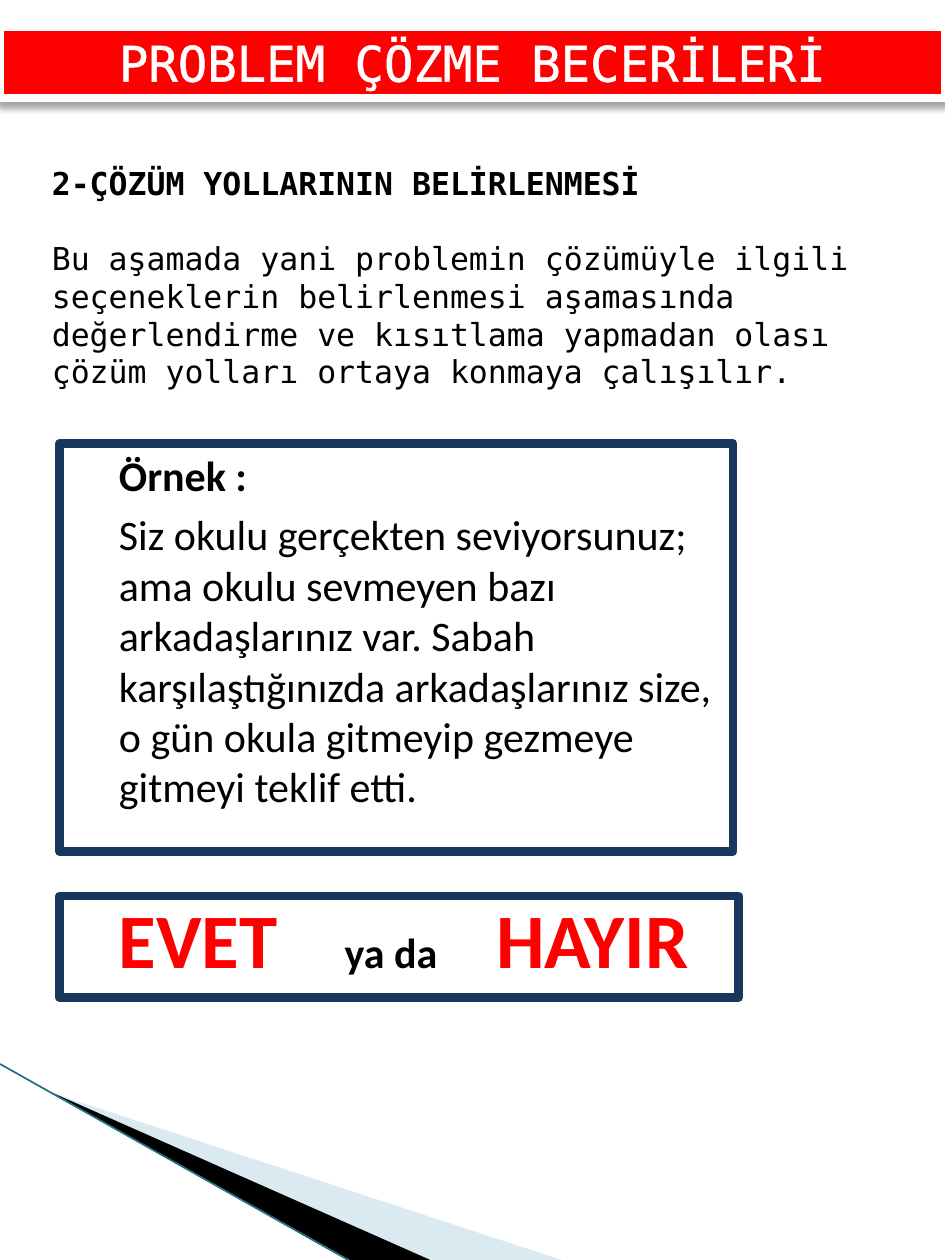
from dataclasses import dataclass

from lxml import etree
from pptx import Presentation
from pptx.dml.color import RGBColor
from pptx.enum.shapes import MSO_CONNECTOR, MSO_SHAPE
from pptx.enum.text import MSO_ANCHOR, PP_ALIGN
from pptx.oxml import parse_xml
from pptx.oxml.ns import nsdecls, qn
from pptx.util import Pt

RECTANGLE = MSO_SHAPE.RECTANGLE
STRAIGHT = MSO_CONNECTOR.STRAIGHT
LEFT, CENTER = PP_ALIGN.LEFT, PP_ALIGN.CENTER
TOP, MIDDLE = MSO_ANCHOR.TOP, MSO_ANCHOR.MIDDLE


@dataclass(frozen=True)
class Theme:
    red: str = "FF0000"
    white: str = "FFFFFF"
    black: str = "000000"
    navy: str = "17375E"
    pale_blue: str = "A0CBDC"
    teal: str = "1F7080"
    mono: str = "DejaVu Sans Mono"
    sans: str = "Calibri"
    title: int = 28
    body: int = 18
    example: int = 24
    answer: int = 44
    border: int = 5


THEME = Theme()


def color(value):
    return RGBColor.from_string(value)


def set_values(target, values):
    for name, value in values.items():
        setattr(target, name, value)


def set_fill(shape, value, alpha=None):
    if value is None:
        shape.fill.background()
        return
    shape.fill.solid()
    shape.fill.fore_color.rgb = color(value)
    if alpha is not None:
        color_element = shape._element.spPr.find(qn("a:solidFill"))[0]
        etree.SubElement(color_element, qn("a:alpha"), val=str(alpha * 1000))


def add_box(slide, bounds, fill, border):
    shape = slide.shapes.add_shape(RECTANGLE, *map(Pt, bounds))
    shape.shadow.inherit = False
    set_fill(shape, fill)
    shape.line.color.rgb = color(border)
    shape.line.width = Pt(THEME.border)
    line = shape.line._ln
    etree.SubElement(line, qn("a:round"))
    return shape


def set_frame(shape, anchor=TOP, margin_left=7.2):
    frame = shape.text_frame
    set_values(frame, {"word_wrap": True, "vertical_anchor": anchor,
                       "margin_left": Pt(margin_left)})
    return frame


def add_run(paragraph, text, face, size, text_color, bold=False):
    run = paragraph.add_run()
    run.text = text
    set_values(run.font, {"name": face, "size": Pt(size), "bold": bold})
    run.font.color.rgb = color(text_color)
    return run


def add_paragraphs(frame, texts, face, size, gap):
    """Write a bold heading followed by plain paragraphs."""
    for index, text in enumerate(texts):
        paragraph = frame.add_paragraph() if index else frame.paragraphs[0]
        paragraph.alignment = LEFT
        paragraph.space_before = Pt(gap if index else 0)
        add_run(paragraph, text, face, size, THEME.black, bold=index == 0)


def add_tabs(paragraph, positions):
    tabs = etree.SubElement(paragraph._p.get_or_add_pPr(), qn("a:tabLst"))
    for position in positions:
        etree.SubElement(tabs, qn("a:tab"), pos=str(Pt(position)), algn="l")


def add_wedge(slide, points, fill, alpha=None):
    corners = [(Pt(x), Pt(y)) for x, y in points]
    builder = slide.shapes.build_freeform(*corners[0])
    builder.add_line_segments(corners[1:], close=True)
    shape = builder.convert_to_shape()
    shape.shadow.inherit = False
    set_fill(shape, fill, alpha)
    shape.line.fill.background()


def add_corner(slide):
    add_wedge(slide, [(29.5, 624.5), (321, 720), (246, 720)], THEME.pale_blue, 40)
    add_wedge(slide, [(29, 624), (246, 720), (200, 720)], THEME.black)
    edge = slide.shapes.add_connector(STRAIGHT, *map(Pt, (0, 608, 199, 720)))
    edge.line.color.rgb = color(THEME.teal)
    edge.line.width = Pt(0.95)
    etree.SubElement(edge._element.spPr, qn("a:effectLst"))


def add_banner(slide, text):
    banner = add_box(slide, (0, 15, 540, 41), THEME.red, THEME.white)
    effects = banner._element.spPr.find(qn("a:effectLst"))
    effects.append(parse_xml(
        f'<a:outerShdw {nsdecls("a")} blurRad="{Pt(4)}" dist="{Pt(3)}" dir="5400000">'
        f'<a:srgbClr val="{THEME.black}"><a:alpha val="35000"/></a:srgbClr>'
        '</a:outerShdw>'))
    paragraph = set_frame(banner, MIDDLE).paragraphs[0]
    paragraph.alignment = CENTER
    run = add_run(paragraph, text, THEME.mono, THEME.title, THEME.white)
    run.font._element.insert(0, parse_xml(
        f'<a:ln {nsdecls("a")} w="{Pt(1.45)}"><a:solidFill>'
        f'<a:srgbClr val="{THEME.white}"/></a:solidFill></a:ln>'))


def add_body(slide, texts):
    box = slide.shapes.add_textbox(*map(Pt, (22.5, 90, 495, 160)))
    add_paragraphs(set_frame(box), texts, THEME.mono, THEME.body, gap=21.5)


def add_example(slide, texts):
    box = add_box(slide, (34, 253.5, 385, 233), None, THEME.navy)
    add_paragraphs(set_frame(box, margin_left=34), texts,
                   THEME.sans, THEME.example, gap=5)


def add_answers(slide, first, joint, second):
    box = add_box(slide, (34, 512, 388, 58), None, THEME.navy)
    paragraph = set_frame(box, margin_left=34).paragraphs[0]
    set_values(paragraph, {"alignment": LEFT, "line_spacing": 0.9})
    add_tabs(paragraph, (129, 215.5))
    add_run(paragraph, first, THEME.sans, THEME.answer, THEME.red, True)
    add_run(paragraph, f"\t{joint}\t", THEME.sans, THEME.example, THEME.black, True)
    add_run(paragraph, second, THEME.sans, THEME.answer, THEME.red, True)


def main():
    presentation = Presentation()
    presentation.slide_width, presentation.slide_height = Pt(540), Pt(720)
    slide = presentation.slides.add_slide(presentation.slide_layouts[6])

    # Corner decoration
    add_corner(slide)

    # Title and explanation
    add_banner(slide, "PROBLEM ÇÖZME BECERİLERİ")
    add_body(slide, (
        "2-ÇÖZÜM YOLLARININ BELİRLENMESİ",
        "Bu aşamada yani problemin çözümüyle ilgili seçeneklerin belirlenmesi "
        "aşamasında değerlendirme ve kısıtlama yapmadan olası çözüm yolları "
        "ortaya konmaya çalışılır."))

    # Example and its two answers
    add_example(slide, (
        "Örnek :",
        "Siz okulu gerçekten seviyorsunuz; ama okulu sevmeyen bazı "
        "arkadaşlarınız var. Sabah karşılaştığınızda arkadaşlarınız size, "
        "o gün okula gitmeyip gezmeye gitmeyi teklif etti."))
    add_answers(slide, "EVET", "ya da", "HAYIR")

    presentation.save("out.pptx")


if __name__ == "__main__":
    main()
